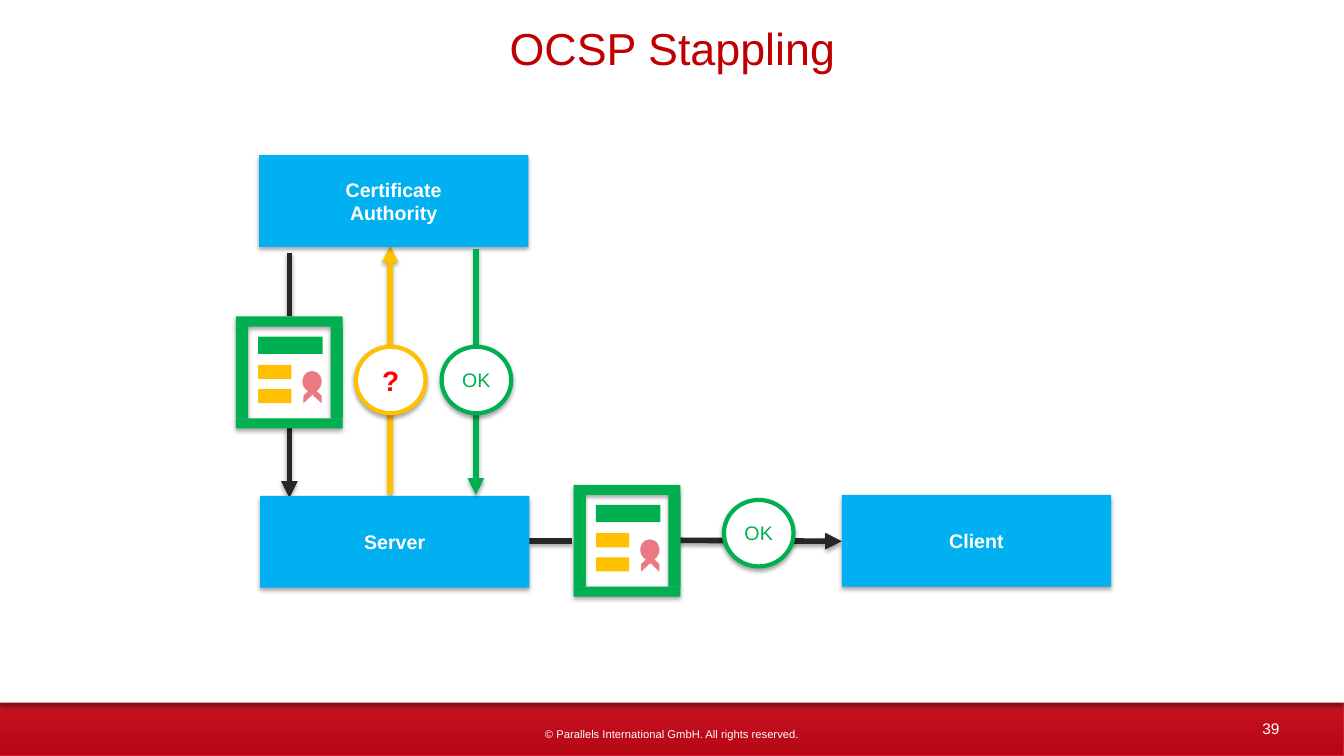
import pptx
import pptx.dml.color
import pptx.enum.shapes
import pptx.enum.text
import pptx.oxml
import pptx.oxml.ns
import pptx.util
from dataclasses import dataclass

Inches = pptx.util.Inches
Pt = pptx.util.Pt
SHAPE = pptx.enum.shapes.MSO_SHAPE


@dataclass(frozen=True)
class Theme:
    font: str = "Arial"
    white: str = "FFFFFF"
    black: str = "262626"
    title: str = "C00000"
    node: str = "00B0F0"
    green: str = "00B050"
    amber: str = "FFC000"
    question: str = "FF0000"
    seal: str = "EA7982"
    band_dark: str = "B60513"
    band_light: str = "D92231"
    band_line: str = "D91D2C"
    title_size: float = 32
    question_size: float = 20
    label_size: float = 14
    number_size: float = 11
    footer_size: float = 8
    arrow_width: float = 4
    ring_width: float = 3


THEME = Theme()
SOFT_SHADOW = (35, 3, 1.8)
PANEL_SHADOW = (40, 4, 3)


def rgb(color):
    return pptx.dml.color.RGBColor.from_string(color)


def set_shadow(shape, shadow):
    """Cast a downward shadow given as (opacity %, blur pt, distance pt), or none."""
    properties = shape._element.spPr
    effects = pptx.oxml.parse_xml(f"<a:effectLst {pptx.oxml.ns.nsdecls('a')}/>")
    if shadow:
        opacity, blur, distance = shadow
        effects.append(pptx.oxml.parse_xml(
            f'<a:outerShdw {pptx.oxml.ns.nsdecls("a")} blurRad="{Pt(blur)}" '
            f'dist="{Pt(distance)}" dir="5400000" rotWithShape="0">'
            f'<a:srgbClr val="000000"><a:alpha val="{opacity * 1000}"/></a:srgbClr>'
            "</a:outerShdw>"))
    properties.append(effects)


def write_text(shape, text, size=THEME.label_size, color=THEME.white, bold=False,
               inset_x=0.05, inset_y=0.05, wrap=True):
    """Centre the text in the shape, one paragraph for each line."""
    frame = shape.text_frame
    frame.word_wrap = wrap
    frame.vertical_anchor = pptx.enum.text.MSO_ANCHOR.MIDDLE
    frame.margin_left = frame.margin_right = Inches(inset_x)
    frame.margin_top = frame.margin_bottom = Inches(inset_y)
    frame.text = text
    for paragraph in frame.paragraphs:
        paragraph.alignment = pptx.enum.text.PP_ALIGN.CENTER
        font = paragraph.font
        font.name, font.size, font.bold = THEME.font, Pt(size), bold
        font.color.rgb = rgb(color)


def add_text(slide, box, text, **text_format):
    write_text(slide.shapes.add_textbox(*map(Inches, box)), text, **text_format)


def add_block(shapes, kind, box, fill, line=None, line_width=1, shadow=None):
    shape = shapes.add_shape(kind, *map(Inches, box))
    shape.fill.solid()
    shape.fill.fore_color.rgb = rgb(fill)
    if line:
        shape.line.color.rgb = rgb(line)
        shape.line.width = Pt(line_width)
    else:
        shape.line.fill.background()
    set_shadow(shape, shadow)
    return shape


def add_arrow(slide, start, end, color, head=True):
    connector = slide.shapes.add_connector(
        pptx.enum.shapes.MSO_CONNECTOR.STRAIGHT, *map(Inches, start + end))
    connector.line.color.rgb = rgb(color)
    connector.line.width = Pt(THEME.arrow_width)
    if head:
        connector.line._get_or_add_ln().append(pptx.oxml.parse_xml(
            f'<a:tailEnd {pptx.oxml.ns.nsdecls("a")} type="triangle"/>'))
    set_shadow(connector, SOFT_SHADOW)


def add_node(slide, left, top, text):
    node = add_block(slide.shapes, SHAPE.RECTANGLE, (left, top, 2.67, 0.91),
                     THEME.node, shadow=SOFT_SHADOW)
    write_text(node, text, bold=True)


def add_badge(slide, left, top, text, ring, **text_format):
    badge = add_block(slide.shapes, SHAPE.OVAL, (left, top, 0.69, 0.66), THEME.white,
                      line=ring, line_width=THEME.ring_width, shadow=SOFT_SHADOW)
    write_text(badge, text, **text_format)


def add_certificate(slide, left, top):
    """Draw a framed certificate with three text bars and a ribbon seal."""
    shapes = slide.shapes.add_group_shape().shapes
    width, height, side, edge = 1.06, 1.11, 0.12, 0.1
    add_block(shapes, SHAPE.RECTANGLE, (left + 0.22, top + 0.2, 0.64, 0.17), THEME.green)
    for bar_top in (0.48, 0.72):
        add_block(shapes, SHAPE.RECTANGLE,
                  (left + 0.22, top + bar_top, 0.33, 0.14), THEME.amber)
    add_block(shapes, SHAPE.OVAL, (left + 0.66, top + 0.54, 0.19, 0.21), THEME.seal)
    for tail_left, flip in ((0.67, "0"), (0.69, "1")):
        tail = add_block(shapes, SHAPE.DIAGONAL_STRIPE,
                         (left + tail_left, top + 0.71, 0.16, 0.15), THEME.seal)
        tail._element.spPr.xfrm.set("flipH", flip)
    frame = ((0, 0, width, edge),
             (width - side, edge, side, height - 2 * edge),
             (0, edge, side, height - 2 * edge),
             (0, height - edge, width, edge))
    for x, y, w, h in frame:
        add_block(shapes, SHAPE.RECTANGLE, (left + x, top + y, w, h),
                  THEME.green, shadow=SOFT_SHADOW)


def add_background(slide, width, height):
    band = add_block(slide.shapes, SHAPE.RECTANGLE, (0, height - 1.25, width, 1.25),
                     THEME.band_dark, line=THEME.band_line, line_width=0.75,
                     shadow=SOFT_SHADOW)
    band.fill.gradient()
    band.fill.gradient_angle = 90
    stops = band.fill.gradient_stops
    for stop, color, position in zip(stops, (THEME.band_dark, THEME.band_light), (0, 0.8)):
        stop.color.rgb = rgb(color)
        stop.position = position
    add_block(slide.shapes, SHAPE.RECTANGLE, (0, 0, width, height - 0.53),
              THEME.white, shadow=PANEL_SHADOW)
    add_text(slide, (12.33, 7.07, 0.55, 0.31), "39", size=THEME.number_size)
    add_text(slide, (5.12, 7.22, 3.09, 0.13),
             "© Parallels International GmbH. All rights reserved.",
             size=THEME.footer_size, inset_x=0, inset_y=0, wrap=False)


def add_diagram(slide, left, top):
    """Place the stapling flow with the authority at the given corner."""
    server_top = top + 3.38
    server_middle = server_top + 0.45
    issue_x, query_x, reply_x = left + 0.3, left + 1.3, left + 2.15
    client_left = left + 5.78

    add_arrow(slide, (issue_x, top + 0.97), (issue_x, top + 1.6), THEME.black, head=False)
    add_arrow(slide, (issue_x, top + 2.71), (issue_x, top + 3.4), THEME.black)
    add_arrow(slide, (left + 2.68, server_middle), (left + 3.1, server_middle),
              THEME.black, head=False)
    add_arrow(slide, (left + 4.16, server_middle - 0.01), (client_left, server_middle),
              THEME.black)
    add_arrow(slide, (query_x, top + 3.36), (query_x, top + 0.9), THEME.amber)

    add_node(slide, client_left, server_top - 0.01, "Client")
    add_node(slide, left, top, "Certificate\nAuthority")
    add_node(slide, left + 0.01, server_top, "Server")

    add_badge(slide, query_x - 0.34, top + 1.9, "?", THEME.amber,
              size=THEME.question_size, color=THEME.question, bold=True)
    add_arrow(slide, (reply_x, top + 0.93), (reply_x, top + 3.37), THEME.green)
    for badge_left, badge_top in ((reply_x - 0.34, top + 1.9),
                                  (left + 4.61, server_top + 0.04)):
        add_badge(slide, badge_left, badge_top, "OK", THEME.green, color=THEME.green)
    add_certificate(slide, left - 0.23, top + 1.6)
    add_certificate(slide, left + 3.12, server_top - 0.11)


def main():
    presentation = pptx.Presentation()
    presentation.slide_width, presentation.slide_height = Inches(13.33), Inches(7.5)
    slide = presentation.slides.add_slide(presentation.slide_layouts[6])
    add_background(slide, 13.33, 7.5)
    add_text(slide, (1.99, 0.2, 9.36, 0.54), "OCSP Stappling", size=THEME.title_size,
             color=THEME.title, inset_x=0, inset_y=0)
    add_diagram(slide, 2.57, 1.54)
    presentation.save("out.pptx")


if __name__ == "__main__":
    main()
